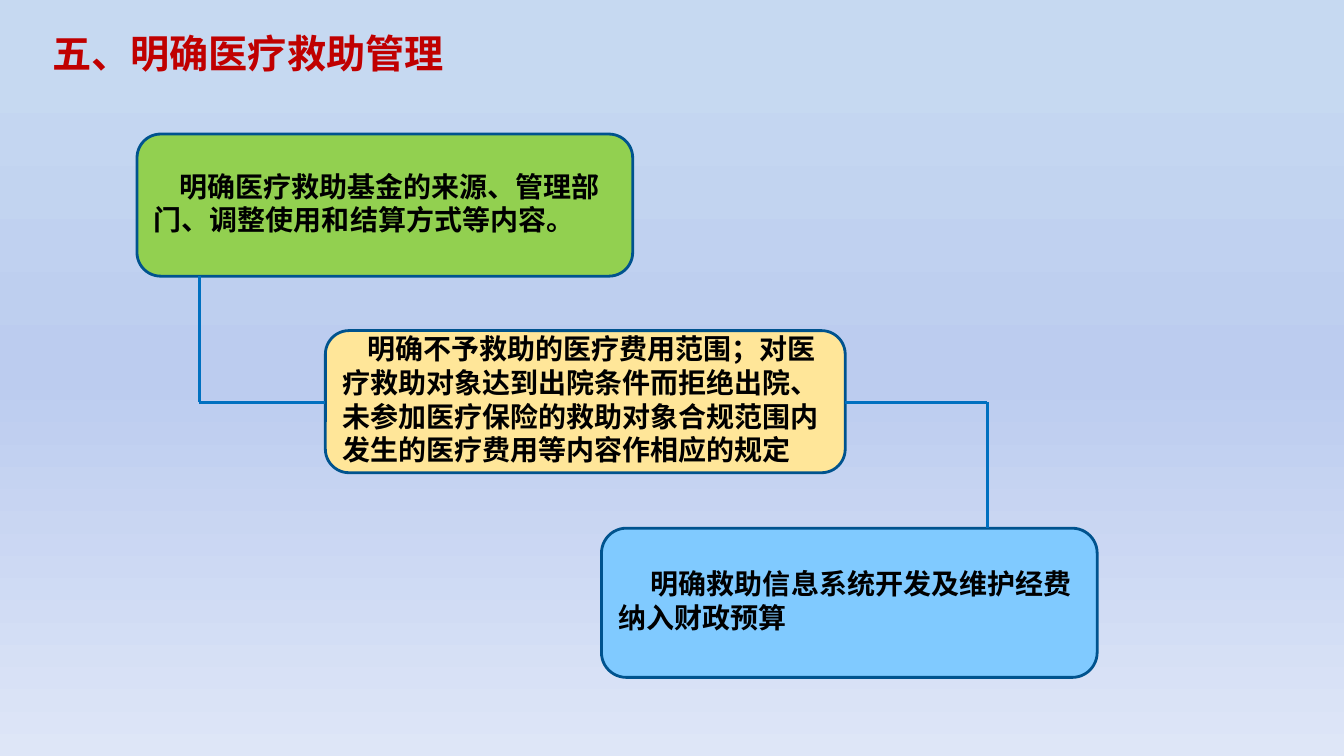
"""Build the slide on medical assistance management as three stepped boxes."""
import copy
from dataclasses import dataclass

import lxml.etree
import pptx
import pptx.dml.color
import pptx.enum.shapes
import pptx.enum.text
import pptx.oxml.ns
import pptx.shapes.autoshape
import pptx.slide
import pptx.text.text
import pptx.util

Inches = pptx.util.Inches
qn = pptx.oxml.ns.qn


@dataclass(frozen=True)
class Theme:
    font: str = "Noto Sans CJK SC"
    title_size: int = 28
    body_size: int = 20
    title: str = "C00000"
    body: str = "000000"
    outline: str = "00538E"
    connector: str = "0070C0"
    outline_width: float = 2
    connector_width: float = 2.25
    background: tuple[tuple[float, str], ...] = (
        (0, "C6D9F1"), (0.08, "C6D9F1"), (0.5, "BCCCEF"), (1, "DEE6F7"))


@dataclass(frozen=True)
class Step:
    text: str
    left: float
    top: float
    width: float
    height: float
    fill: str
    indent: float


@dataclass(frozen=True)
class Segment:
    start: tuple[float, float]
    end: tuple[float, float]


THEME = Theme()
TITLE = "五、明确医疗救助管理"
STEPS = (
    Step("明确医疗救助基金的来源、管理部门、调整使用和结算方式等内容。",
         1.36, 1.33, 4.92, 1.41, "92D050", 0.25),
    Step("明确不予救助的医疗费用范围；对医疗救助对象达到出院条件而拒绝出院、"
         "未参加医疗保险的救助对象合规范围内发生的医疗费用等内容作相应的规定",
         3.23, 3.28, 5.16, 1.41, "FFE699", 0.25),
    Step("明确救助信息系统开发及维护经费纳入财政预算",
         5.97, 5.24, 4.92, 1.48, "80CAFF", 0.32),
)
LEFT_X, RIGHT_X, MIDDLE_Y = 1.98, 9.8, 3.99
SEGMENTS = (
    Segment((LEFT_X, 2.74), (LEFT_X, MIDDLE_Y)),
    Segment((LEFT_X, MIDDLE_Y), (3.23, MIDDLE_Y)),
    Segment((8.39, MIDDLE_Y), (RIGHT_X, MIDDLE_Y)),
    Segment((RIGHT_X, MIDDLE_Y), (RIGHT_X, 5.24)),
)


def rgb(value: str) -> pptx.dml.color.RGBColor:
    """Turn a hexadecimal value into a colour."""
    return pptx.dml.color.RGBColor.from_string(value)


def format_paragraph(paragraph: pptx.text.text._Paragraph, size: int, color: str) -> None:
    """Left-align a paragraph and give its runs the bold theme font."""
    paragraph.alignment = pptx.enum.text.PP_ALIGN.LEFT
    for run in paragraph.runs:
        run.font.size = pptx.util.Pt(size)
        run.font.bold = True
        run.font.color.rgb = rgb(color)
        run.font.name = THEME.font
        east_asian = lxml.etree.SubElement(run._r.get_or_add_rPr(), qn("a:ea"))
        east_asian.set("typeface", THEME.font)


def paint_background(slide: pptx.slide.Slide) -> None:
    """Fill the background with the vertical theme gradient."""
    fill = slide.background.fill
    fill.gradient()
    fill.gradient_angle = 270
    stop_list = next(slide.element.iter(qn("a:gsLst")))
    while len(stop_list) < len(THEME.background):
        stop_list.append(copy.deepcopy(stop_list[0]))
    for stop, (position, color) in zip(fill.gradient_stops, THEME.background):
        stop.position = position
        stop.color.rgb = rgb(color)


def set_title(slide: pptx.slide.Slide) -> None:
    """Place and format the title placeholder."""
    title = slide.shapes.title
    title.left, title.top = Inches(0.42), Inches(0.24)
    title.width, title.height = Inches(4.25), Inches(0.57)
    frame = title.text_frame
    frame.text = TITLE
    frame.word_wrap = True
    frame.auto_size = pptx.enum.text.MSO_AUTO_SIZE.NONE
    frame.vertical_anchor = pptx.enum.text.MSO_ANCHOR.TOP
    format_paragraph(frame.paragraphs[0], THEME.title_size, THEME.title)


def add_step(slide: pptx.slide.Slide, step: Step) -> pptx.shapes.autoshape.Shape:
    """Add one rounded box with an indented first line."""
    shape = slide.shapes.add_shape(
        pptx.enum.shapes.MSO_SHAPE.ROUNDED_RECTANGLE,
        Inches(step.left), Inches(step.top), Inches(step.width), Inches(step.height))
    shape.shadow.inherit = False
    shape.fill.solid()
    shape.fill.fore_color.rgb = rgb(step.fill)
    shape.line.color.rgb = rgb(THEME.outline)
    shape.line.width = pptx.util.Pt(THEME.outline_width)
    frame = shape.text_frame
    frame.text = step.text
    frame.word_wrap = True
    frame.vertical_anchor = pptx.enum.text.MSO_ANCHOR.MIDDLE
    frame.margin_top, frame.margin_bottom = Inches(0), Inches(0.05)
    paragraph = frame.paragraphs[0]
    format_paragraph(paragraph, THEME.body_size, THEME.body)
    paragraph._p.get_or_add_pPr().set("indent", str(Inches(step.indent)))
    return shape


def add_segment(slide: pptx.slide.Slide, segment: Segment) -> None:
    """Add one straight piece of the lines between boxes."""
    connector = slide.shapes.add_connector(
        pptx.enum.shapes.MSO_CONNECTOR.STRAIGHT,
        *map(Inches, segment.start + segment.end))
    connector.line.color.rgb = rgb(THEME.connector)
    connector.line.width = pptx.util.Pt(THEME.connector_width)
    lxml.etree.SubElement(connector._element.spPr, qn("a:effectLst"))


def main() -> None:
    """Build and save the presentation."""
    presentation = pptx.Presentation()
    presentation.slide_width = Inches(13.34)
    presentation.slide_height = Inches(7.5)
    slide = presentation.slides.add_slide(presentation.slide_layouts.get_by_name("Title Only"))
    paint_background(slide)
    set_title(slide)
    for step in STEPS:
        add_step(slide, step)
    for segment in SEGMENTS:
        add_segment(slide, segment)
    presentation.save("out.pptx")


if __name__ == "__main__":
    main()
